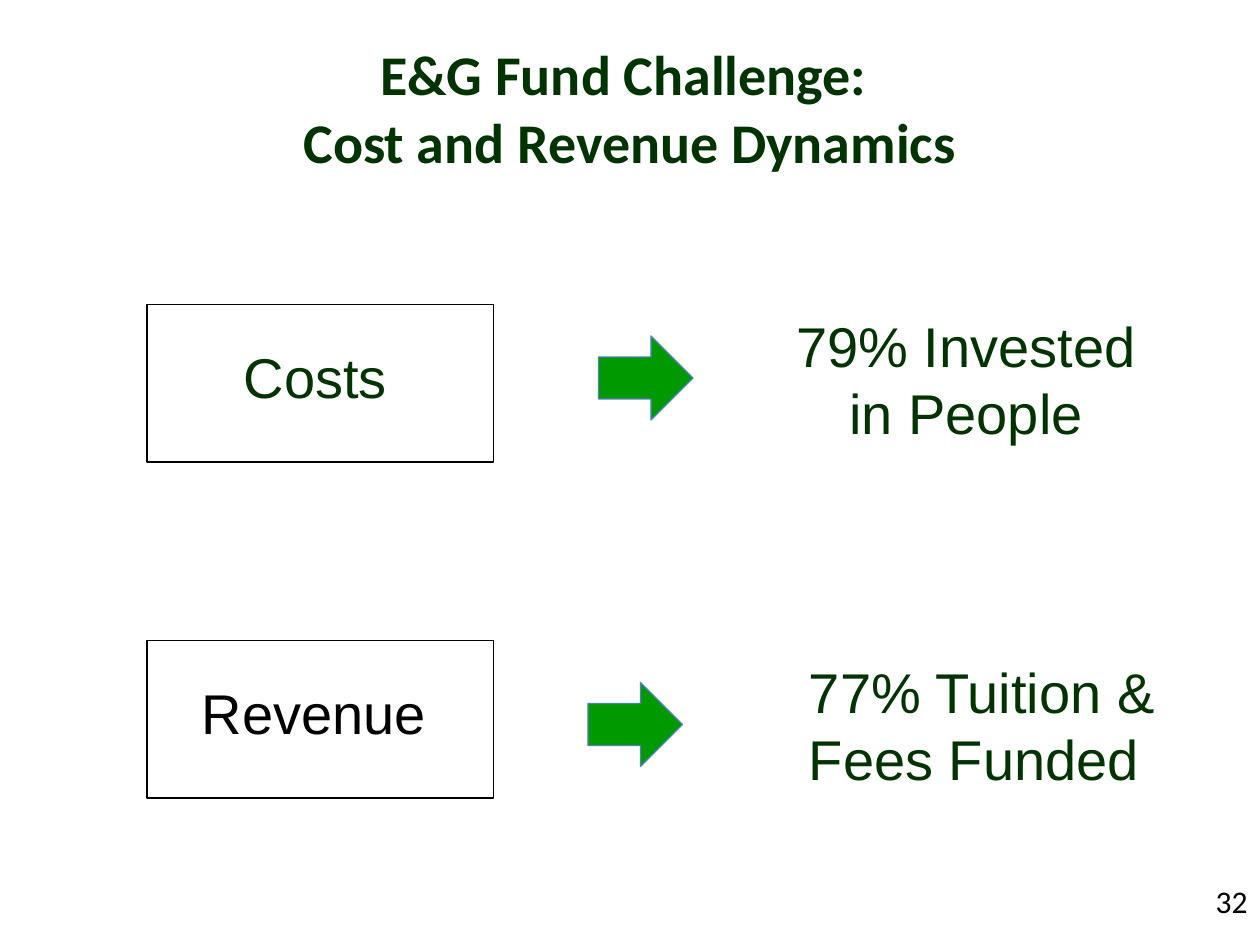
from pptx import Presentation
from pptx.dml.color import RGBColor
from pptx.enum.shapes import MSO_SHAPE as Shape
from pptx.enum.text import MSO_ANCHOR as Anchor, MSO_AUTO_SIZE as AutoSize, PP_ALIGN as Align
from pptx.oxml.ns import qn
from pptx.util import Inches, Pt

COLUMNS, ROWS = 120, 90
DARK_GREEN, GREEN, BLUE, BLACK = "003300", "009900", "4F81BD", "000000"


def color(hex_text):
    return RGBColor.from_string(hex_text)


class Page:
    """Style and current slide; every area is (column, row, columns, rows)."""

    def __init__(self, deck):
        self.column = deck.slide_width / COLUMNS
        self.row = deck.slide_height / ROWS
        self.slide = deck.slides.add_slide(deck.slide_layouts[1])

    def area(self, left, top, width, height):
        return (round(left * self.column), round(top * self.row),
                round(width * self.column), round(height * self.row))

    def move(self, box, area):
        box.left, box.top, box.width, box.height = self.area(*area)

    def set_text(self, box, lines, ink, align, font="Arial", size=32, bold=False):
        frame = box.text_frame
        frame.word_wrap = True
        frame.auto_size = AutoSize.NONE
        frame.text = "\n".join(lines)
        for para in frame.paragraphs:
            para.alignment = align
            para.space_before = Pt(0)
            para.font.name, para.font.size, para.font.bold = font, Pt(size), bold
            para.font.color.rgb = color(ink)
        return frame

    def title(self, area, lines):
        box = self.slide.shapes.title
        self.move(box, area)
        frame = self.set_text(box, lines, DARK_GREEN, Align.CENTER, "Calibri", bold=True)
        frame.vertical_anchor = Anchor.MIDDLE

    def label(self, box, text, ink, align):
        """Put in text that is set in from the top left of its box."""
        frame = self.set_text(box, [text], ink, align)
        frame.vertical_anchor = Anchor.TOP
        frame.margin_left, frame.margin_top = Inches(1.1), Inches(0.47)

    def body(self, area, text, ink):
        box = self.slide.placeholders[1]
        self.move(box, area)
        self.label(box, text, ink, Align.LEFT)
        for para in box.text_frame.paragraphs:
            properties = para._p.get_or_add_pPr()
            properties.set("marL", "0")
            properties.set("indent", "0")
            bullet = properties.makeelement(qn("a:buNone"), {})
            properties.find(qn("a:defRPr")).addprevious(bullet)

    def text_box(self, area):
        return self.slide.shapes.add_textbox(*self.area(*area))

    def text(self, area, text, align):
        self.label(self.text_box(area), text, DARK_GREEN, align)

    def number(self, area, text):
        self.set_text(self.text_box(area), [text], BLACK, Align.RIGHT, "Calibri", 18)

    def shape(self, kind, area, line, fill=None):
        shape = self.slide.shapes.add_shape(kind, *self.area(*area))
        shape.shadow.inherit = False
        shape.line.color.rgb, shape.line.width = color(line), Pt(0.75)
        if fill:
            shape.fill.solid()
            shape.fill.fore_color.rgb = color(fill)
        else:
            shape.fill.background()


def main():
    deck = Presentation()
    deck.slide_width, deck.slide_height = Inches(10), Inches(7.5)
    page = Page(deck)

    page.title((0, 4.4, 120, 11.6), ["E&G Fund Challenge: ", "Cost and Revenue Dynamics"])
    page.body((6, 59, 43, 18), "Revenue", BLACK)
    page.text((10, 27, 43, 17), "Costs", Align.LEFT)
    page.text((62, 57, 51, 23), "77% Tuition & Fees Funded ", Align.CENTER)
    page.text((61, 24, 50, 22), "79% Invested in People", Align.CENTER)

    for frame_row, arrow_column, arrow_row in ((61, 56, 65), (29, 57, 32)):
        page.shape(Shape.RECTANGLE, (14, frame_row, 33, 15), BLACK)
        page.shape(Shape.RIGHT_ARROW, (arrow_column, arrow_row, 9, 8), BLUE, GREEN)

    page.number((92, 83.4, 28, 4.8), "32")
    deck.save("out.pptx")


if __name__ == "__main__":
    main()
